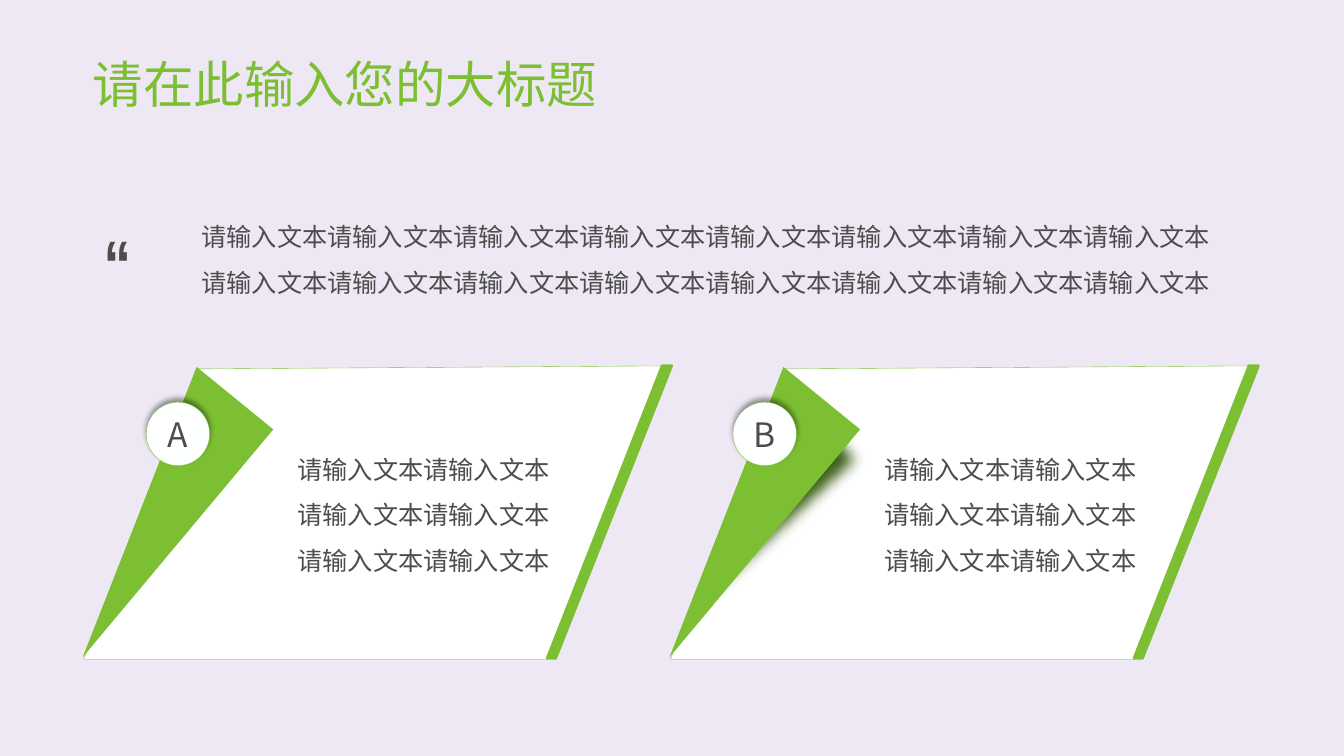
import pptx
import pptx.util
import pptx.dml.color
import pptx.enum.shapes
import pptx.enum.text
import pptx.oxml
import pptx.oxml.ns

Inches = pptx.util.Inches
Pt = pptx.util.Pt
RGBColor = pptx.dml.color.RGBColor
Align = pptx.enum.text.PP_ALIGN
Anchor = pptx.enum.text.MSO_ANCHOR
qn = pptx.oxml.ns.qn

TITLE = "请在此输入您的大标题"
PHRASE = "请输入文本"
QUOTE = PHRASE * 16
CARDS = [("A", PHRASE * 6), ("B", PHRASE * 6)]
SHADED_CARD = "B"

CARD_PITCH = 5.82
PANEL = [(6.58, 3.63), (5.43, 6.54), (0.83, 6.54), (1.96, 3.66)]
FOLD = [(1.95, 3.64), (2.71, 4.26), (0.82, 6.52)]
FOLD_SHADE = [(2.92, 4.57), (0.71, 6.62), (2.08, 3.69)]
EDGE = [(6.66, 3.63), (5.51, 6.53), (5.43, 6.53), (6.57, 3.63)]
BADGE = (1.45, 3.99, 0.63, 0.63)
CARD_TEXT = (2.82, 4.29, 2.76, 1.48)

FONT = "Noto Sans CJK SC"
LAVENDER = RGBColor(0xEE, 0xE8, 0xF4)
GREEN = RGBColor(0x7C, 0xBF, 0x33)
DARK_GREEN = RGBColor(0x3E, 0x60, 0x19)
WHITE = RGBColor(0xFF, 0xFF, 0xFF)
BADGE_WHITE = RGBColor(0xFE, 0xFF, 0xFF)
GREY = RGBColor(0x4D, 0x4D, 0x4D)
BADGE_GREY = RGBColor(0x4C, 0x4D, 0x4D)

NS = pptx.oxml.ns.nsdecls("a")
SOFT_EDGE = f'<a:softEdge {NS} rad="{Pt(10)}"/>'
BADGE_SHADOW = (
    f'<a:outerShdw {NS} blurRad="{Pt(4)}" dist="{Pt(3)}" dir="16200000" rotWithShape="0">'
    '<a:srgbClr val="000000"><a:alpha val="40000"/></a:srgbClr></a:outerShdw>'
)


def write(frame, text, size, color, font=FONT, align=Align.LEFT,
          spacing=1.0, anchor=Anchor.MIDDLE, bold=False):
    frame.word_wrap = True
    frame.vertical_anchor = anchor
    frame.text = text
    paragraph = frame.paragraphs[0]
    paragraph.alignment = align
    paragraph.line_spacing = spacing
    run = paragraph.runs[0]
    run.font.size = Pt(size)
    run.font.name = font
    run.font.bold = bold
    run.font.color.rgb = color
    east_asian = run.font._element.makeelement(qn("a:ea"), {"typeface": font})
    run.font._element.find(qn("a:latin")).addnext(east_asian)


def paint(shape, fill, line_width=0, effect=None):
    shape.shadow.inherit = False
    shape.fill.solid()
    shape.fill.fore_color.rgb = fill
    if line_width:
        shape.line.color.rgb = GREEN
        shape.line.width = Pt(line_width)
    else:
        shape.line.fill.background()
    if effect:
        effects = shape._element.spPr.find(qn("a:effectLst"))
        effects.append(pptx.oxml.parse_xml(effect))


def box(place, shift=0):
    left, top, width, height = place
    return Inches(left + shift), Inches(top), Inches(width), Inches(height)


def outline(shapes, points, shift):
    corners = [(Inches(x + shift), Inches(y)) for x, y in points]
    builder = shapes.build_freeform(*corners[0], scale=1.0)
    builder.add_line_segments(corners[1:], close=True)
    return builder.convert_to_shape()


def add_card(shapes, letter, text, shift):
    paint(outline(shapes, PANEL, shift), WHITE, 0.25)
    if letter == SHADED_CARD:
        paint(outline(shapes, FOLD_SHADE, shift), DARK_GREEN, effect=SOFT_EDGE)
    paint(outline(shapes, FOLD, shift), GREEN)
    paint(outline(shapes, EDGE, shift), GREEN, 2.25)

    badge = shapes.add_shape(pptx.enum.shapes.MSO_SHAPE.OVAL, *box(BADGE, shift))
    paint(badge, BADGE_WHITE, 0.25, BADGE_SHADOW)
    frame = badge.text_frame
    frame.margin_left = frame.margin_right = frame.margin_top = frame.margin_bottom = 0
    write(frame, letter, 24, BADGE_GREY, align=Align.CENTER)

    body = shapes.add_textbox(*box(CARD_TEXT, shift))
    write(body.text_frame, text, 18, GREY, align=Align.CENTER, spacing=1.5)


def main():
    deck = pptx.Presentation()
    deck.slide_width, deck.slide_height = Inches(13.33), Inches(7.5)
    slide = deck.slides.add_slide(deck.slide_layouts[5])
    slide.background.fill.solid()
    slide.background.fill.fore_color.rgb = LAVENDER
    shapes = slide.shapes

    title = shapes.title
    title.left, title.top, title.width, title.height = box((0.82, 0.4, 11.31, 0.93))
    write(title.text_frame, TITLE, 36, GREEN, spacing=0.9)

    for index, (letter, text) in enumerate(CARDS):
        add_card(shapes, letter, text, index * CARD_PITCH)

    quote = shapes.add_textbox(*box((1.9, 1.85, 10.34, 1.3)))
    write(quote.text_frame, QUOTE, 18, GREY, spacing=1.5)
    quote_mark = shapes.add_textbox(*box((0.93, 2.15, 0.7, 0.91)))
    write(quote_mark.text_frame, "“", 48, GREY, font="Arial Narrow",
          anchor=Anchor.TOP, bold=True)

    deck.save("out.pptx")


if __name__ == "__main__":
    main()
